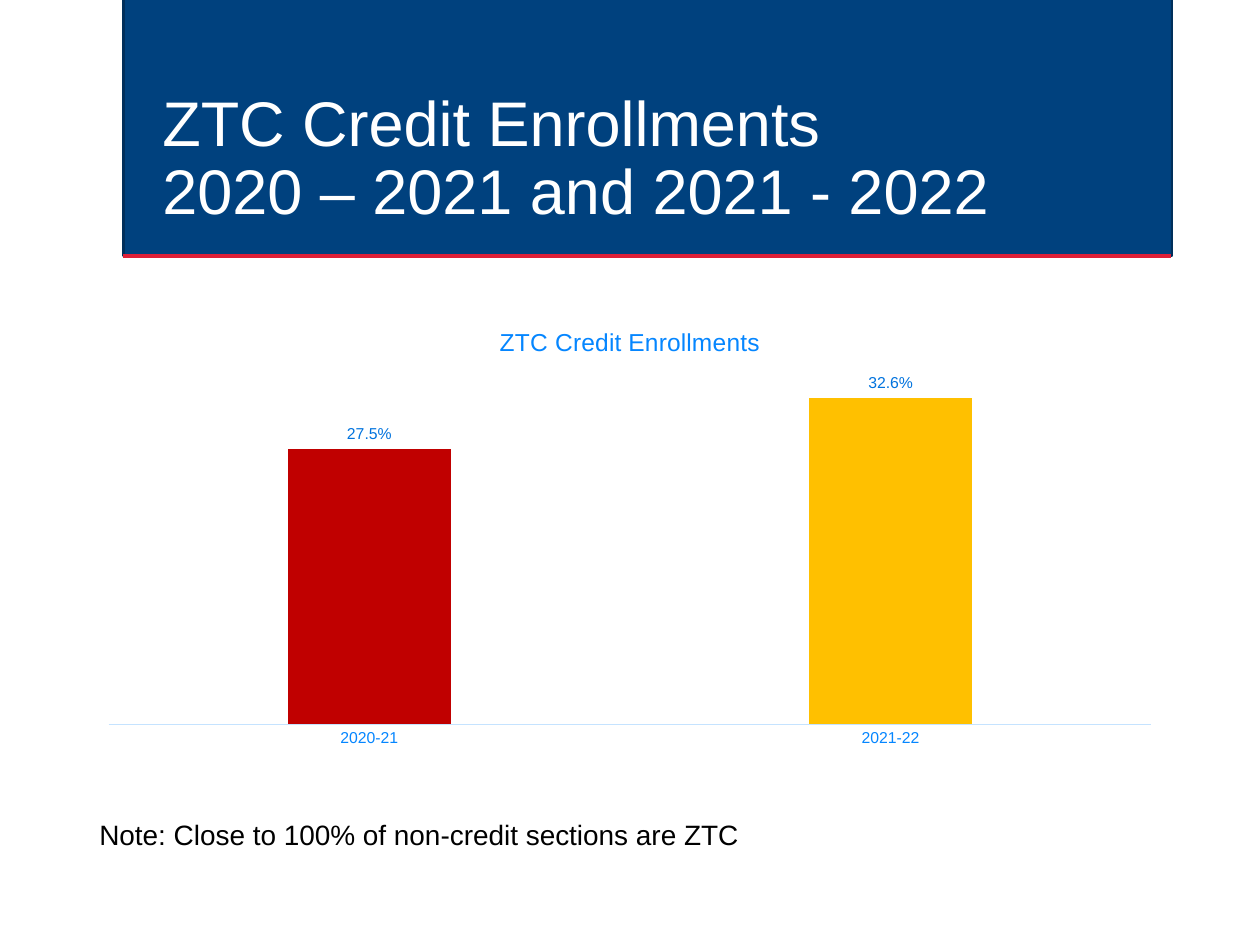
from lxml.etree import SubElement
from pptx import Presentation
from pptx.chart.data import CategoryChartData
from pptx.dml.color import RGBColor
from pptx.enum.chart import XL_CHART_TYPE, XL_LABEL_POSITION, XL_TICK_LABEL_POSITION, XL_TICK_MARK
from pptx.enum.shapes import MSO_CONNECTOR, MSO_SHAPE
from pptx.enum.text import MSO_ANCHOR
from pptx.oxml import parse_xml
from pptx.oxml.ns import nsdecls, qn
from pptx.util import Inches, Pt

COLORS = {
    "banner": "00417E", "banner_edge": "002F5B", "rule": "DE1F37",
    "white": "FFFFFF", "black": "000000", "heading": "0586FF",
    "label": "0073DE", "axis": "C5E3FF", "red": "C00000", "gold": "FFC000",
}


def color(name):
    return RGBColor.from_string(COLORS[name])


def style_font(font, size, name):
    font.name = "Arial"
    font.size = Pt(size)
    font.bold = False
    font.color.rgb = color(name)


deck = Presentation()
deck.slide_width, deck.slide_height = Inches(10), Inches(7.5)
page = deck.slides.add_slide(deck.slide_layouts[6])

banner = page.shapes.add_shape(
    MSO_SHAPE.RECTANGLE, Inches(0.98), Inches(-0.02), Inches(8.32), Inches(2.05))
banner.shadow.inherit = False
banner.fill.solid()
banner.fill.fore_color.rgb = color("banner")
banner.line.color.rgb = color("banner_edge")
banner.line.width = Pt(1.25)

rule = page.shapes.add_connector(
    MSO_CONNECTOR.STRAIGHT, Inches(0.98), Inches(2.03), Inches(9.29), Inches(2.03))
rule.line.color.rgb = color("rule")
rule.line.width = Pt(2.5)
SubElement(rule._element.spPr, qn("a:effectLst"))

title_box = page.shapes.add_textbox(Inches(1.19), Inches(0.57), Inches(7.88), Inches(1.29))
title_box.text_frame.word_wrap = True
title_box.text_frame.vertical_anchor = MSO_ANCHOR.BOTTOM
para = title_box.text_frame.paragraphs[0]
para.line_spacing = 0.9
for index, line in enumerate(["ZTC Credit Enrollments", "2020 – 2021 and 2021 - 2022"]):
    if index:
        para.add_line_break()
    span = para.add_run()
    span.text = line
    style_font(span.font, 36, "white")

data = CategoryChartData(number_format="0.0%")
data.categories = ["2020-21", "2021-22"]
data.add_series("ZTC Credit Enrollments", [0.275, 0.326])
chart = page.shapes.add_chart(
    XL_CHART_TYPE.COLUMN_CLUSTERED,
    Inches(0.69), Inches(2.43), Inches(8.62), Inches(3.57), data).chart
style_font(chart.font, 10, "banner")
chart.has_legend = False
chart.has_title = True
chart.chart_title.include_in_layout = False
span = chart.chart_title.text_frame.paragraphs[0].add_run()
span.text = "ZTC Credit Enrollments"
style_font(span.font, 14, "heading")

category_axis = chart.category_axis
category_axis.major_tick_mark = XL_TICK_MARK.NONE
category_axis.tick_label_position = XL_TICK_LABEL_POSITION.NEXT_TO_AXIS
category_axis.format.line.color.rgb = color("axis")
category_axis.format.line.width = Pt(0.75)
style_font(category_axis.tick_labels.font, 9, "heading")

value_axis = chart.value_axis
value_axis.visible = False
value_axis.has_major_gridlines = False
value_axis.minimum_scale = 0
value_axis.maximum_scale = 0.35
value_axis.tick_labels.number_format = "0.0%"
value_axis.tick_labels.number_format_is_linked = False

plot = chart.plots[0]
plot.gap_width = 219
plot.overlap = -27
plot.vary_by_categories = False
series = plot.series[0]
for index, name in enumerate(["red", "gold"]):
    fill = series.points[index].format.fill
    fill.solid()
    fill.fore_color.rgb = color(name)
labels = series.data_labels
labels.show_value = True
labels.position = XL_LABEL_POSITION.OUTSIDE_END
labels.number_format = "0.0%"
labels.number_format_is_linked = False
style_font(labels.font, 9, "label")

plot_area = chart._chartSpace.chart.plotArea
for old_layout in plot_area.findall(qn("c:layout")):
    plot_area.remove(old_layout)
plot_area.insert(0, parse_xml(
    f'<c:layout {nsdecls("c")}><c:manualLayout><c:layoutTarget val="inner"/>'
    '<c:xMode val="edge"/><c:yMode val="edge"/><c:x val="0.02"/><c:y val="0.15"/>'
    '<c:w val="0.96"/><c:h val="0.78"/></c:manualLayout></c:layout>'))

note_box = page.shapes.add_textbox(Inches(0.69), Inches(6.44), Inches(7.27), Inches(0.37))
note_box.text_frame.word_wrap = True
span = note_box.text_frame.paragraphs[0].add_run()
span.text = "Note: Close to 100% of non-credit sections are ZTC"
style_font(span.font, 16, "black")

deck.save("out.pptx")
